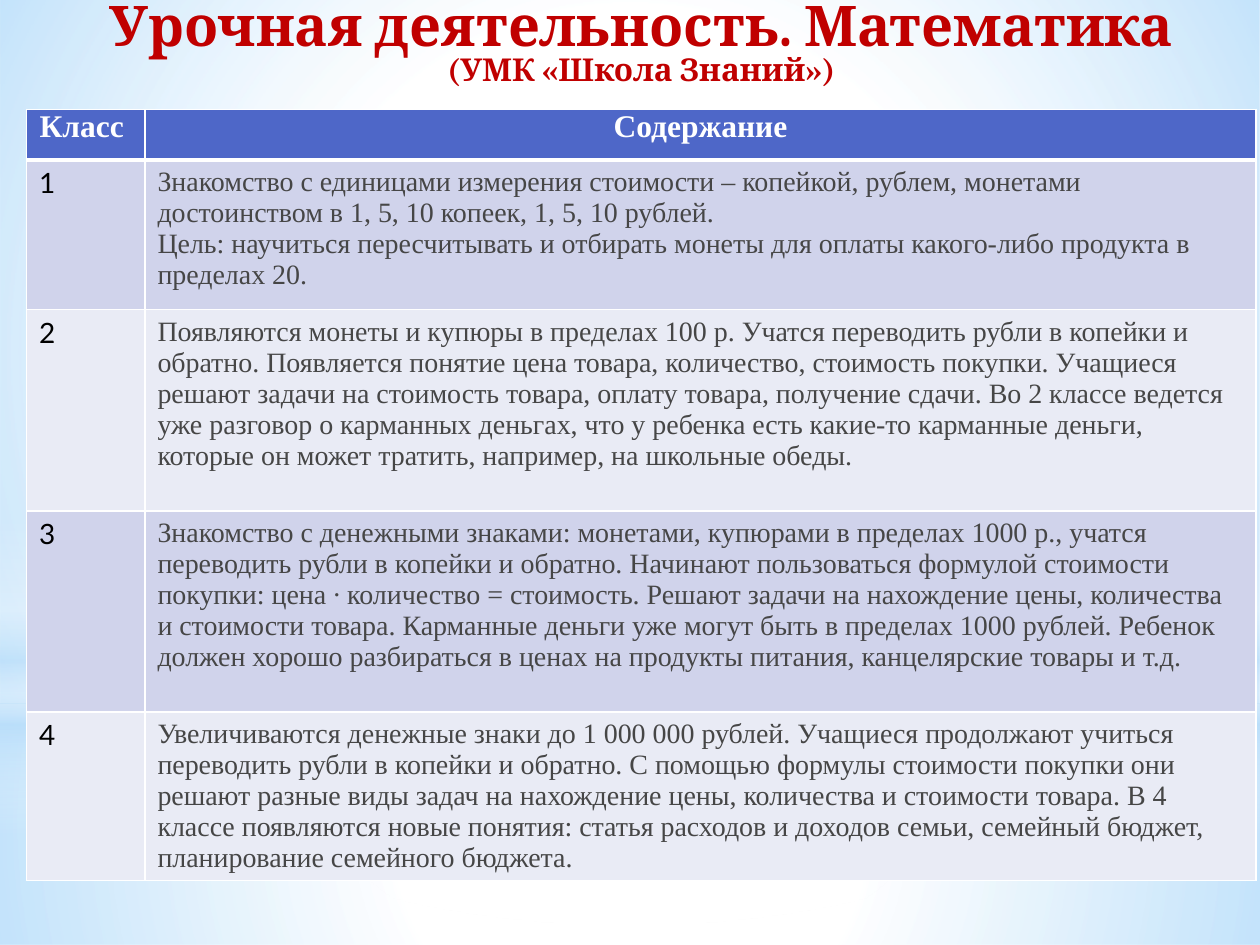
from lxml.etree import SubElement
from pptx import Presentation
from pptx.dml.color import RGBColor
from pptx.enum.shapes import MSO_SHAPE
from pptx.enum.text import MSO_ANCHOR, MSO_AUTO_SIZE, PP_ALIGN
from pptx.oxml.ns import qn
from pptx.util import Pt

WHITE, SKY, RED, GREY = "FFFFFF", "B4DCFA", "C00000", "464646"
HEADER_FILL, BANDS = "4E67C8", ("D0D3EB", "E9EBF5")
SERIF = "Times New Roman"

# shape, top, height, gradient stops (position, colour, opacity), radial
GLOWS = [
    (MSO_SHAPE.RECTANGLE, 401.8, 138.2,
     [(0, WHITE, 91), (37, WHITE, 76), (100, SKY, 79)], True),
    (MSO_SHAPE.RECTANGLE, 0, 401.8,
     [(0, WHITE, 89), (48, WHITE, 62), (100, SKY, 79)], True),
    (MSO_SHAPE.RECTANGLE, 296.6, 180,
     [(0, WHITE, 0), (29, WHITE, 30), (45, SKY, 40), (55, WHITE, 26),
      (65, SKY, 60), (100, WHITE, 0)], False),
    (MSO_SHAPE.OVAL, 126, 401.8, [(0, WHITE, 100), (56, WHITE, 0)], True),
]

HEADINGS = ["Класс ", "Содержание"]
GRADES = [
    ["Знакомство с единицами измерения стоимости – копейкой, рублем, монетами "
     "достоинством в 1, 5, 10 копеек, 1, 5, 10 рублей.",
     "Цель: научиться пересчитывать и отбирать монеты для оплаты какого-либо "
     "продукта в пределах 20."],
    ["Появляются монеты и купюры в пределах 100 р. Учатся переводить рубли в "
     "копейки и обратно. Появляется понятие цена товара, количество, стоимость "
     "покупки. Учащиеся решают задачи на стоимость товара, оплату товара, "
     "получение сдачи. Во 2 классе ведется уже разговор о карманных деньгах, "
     "что у ребенка есть какие-то карманные деньги, которые он может тратить, "
     "например, на школьные обеды."],
    ["Знакомство с денежными знаками: монетами, купюрами в пределах 1000 р., "
     "учатся переводить рубли в копейки и обратно. Начинают пользоваться "
     "формулой стоимости покупки: цена ∙ количество = стоимость. Решают задачи "
     "на нахождение цены, количества и стоимости товара. Карманные деньги уже "
     "могут быть в пределах 1000 рублей. Ребенок должен хорошо разбираться в "
     "ценах на продукты питания, канцелярские товары и т.д."],
    ["Увеличиваются денежные знаки до 1 000 000 рублей. Учащиеся продолжают "
     "учиться переводить рубли в копейки и обратно. С помощью формулы стоимости "
     "покупки они решают разные виды задач на нахождение цены, количества и "
     "стоимости товара. В 4 классе появляются новые понятия: статья расходов и "
     "доходов семьи, семейный бюджет, планирование семейного бюджета."],
]
COLUMN_WIDTHS = [67.7, 635]
ROW_HEIGHTS = [29, 85.5, 115, 115, 96]


def rgb(color):
    return RGBColor.from_string(color)


def style(p, size, name, color, bold=False, align=PP_ALIGN.LEFT):
    p.alignment = align
    p.font.size, p.font.name, p.font.bold = Pt(size), name, bold
    p.font.color.rgb = rgb(color)


def add_glow(slide, kind, top, height, stops, radial):
    """Add a full-width shape with a translucent gradient."""
    sp = slide.shapes.add_shape(kind, 0, Pt(top), Pt(720), Pt(height))
    sp.shadow.inherit = False
    sp.line.fill.background()
    sp.fill.background()
    no_fill = sp.element.spPr.find(qn("a:noFill"))
    grad = SubElement(sp.element.spPr, qn("a:gradFill"), rotWithShape="1")
    no_fill.getparent().replace(no_fill, grad)
    stop_list = SubElement(grad, qn("a:gsLst"))
    for position, color, opacity in stops:
        gs = SubElement(stop_list, qn("a:gs"), pos=str(position * 1000))
        clr = SubElement(gs, qn("a:srgbClr"), val=color)
        SubElement(clr, qn("a:alpha"), val=str(opacity * 1000))
    if radial:
        center = SubElement(grad, qn("a:path"), path="circle")
        SubElement(center, qn("a:fillToRect"), l="50000", t="50000", r="50000", b="50000")
    else:
        SubElement(grad, qn("a:lin"), ang="5400000", scaled="0")


def add_title(slide):
    title = slide.shapes.title
    title.element.getparent().append(title.element)  # in front of the glows
    title.left, title.top, title.width, title.height = Pt(42.5), Pt(2), Pt(648), Pt(56)
    tf = title.text_frame
    tf.word_wrap, tf.auto_size = True, MSO_AUTO_SIZE.NONE
    tf.vertical_anchor = MSO_ANCHOR.TOP
    tf.margin_top = tf.margin_bottom = 0
    tf.text = "Урочная деятельность. Математика\n(УМК «Школа Знаний»)"
    for p, size in zip(tf.paragraphs, (32, 18)):
        style(p, size, "Cambria", RED, True, PP_ALIGN.CENTER)
        p.line_spacing = 0.8
        p.space_before = Pt(0)


def format_cell(cell, fill, top=1, bottom=1):
    """Set the fill and white borders; top and bottom are border widths."""
    tc_pr = cell._tc.get_or_add_tcPr()
    for side, width in (("L", 1), ("R", 1), ("T", top), ("B", bottom)):
        ln = SubElement(tc_pr, qn(f"a:ln{side}"), w=str(Pt(width)))
        SubElement(SubElement(ln, qn("a:solidFill")), qn("a:srgbClr"), val=WHITE)
    cell.fill.solid()
    cell.fill.fore_color.rgb = rgb(fill)


def fill_header(table):
    for cell, heading in zip(table.rows[0].cells, HEADINGS):
        format_cell(cell, HEADER_FILL, bottom=3)
        cell.margin_left = cell.margin_right = Pt(5)
        cell.margin_top = cell.margin_bottom = 0
        cell.text = heading
        style(cell.text_frame.paragraphs[0], 18, SERIF, WHITE, True, PP_ALIGN.CENTER)


def fill_grade(table, grade, paragraphs):
    fonts = (("Lato", "000000"), (SERIF, GREY))
    texts = (str(grade), "\n".join(paragraphs))
    for cell, text, (name, color) in zip(table.rows[grade].cells, texts, fonts):
        format_cell(cell, BANDS[(grade - 1) % 2], top=3 if grade == 1 else 1)
        cell.text = text
        for p in cell.text_frame.paragraphs:
            style(p, 16, name, color)


def add_grades_table(slide):
    table = slide.shapes.add_table(
        len(ROW_HEIGHTS), len(COLUMN_WIDTHS), Pt(15.1), Pt(62.5),
        Pt(sum(COLUMN_WIDTHS)), Pt(sum(ROW_HEIGHTS))).table
    for column, width in zip(table.columns, COLUMN_WIDTHS):
        column.width = Pt(width)
    for row, height in zip(table.rows, ROW_HEIGHTS):
        row.height = Pt(height)
    fill_header(table)
    for grade, paragraphs in enumerate(GRADES, 1):
        fill_grade(table, grade, paragraphs)


def main():
    prs = Presentation()
    prs.slide_width, prs.slide_height = Pt(720), Pt(540)
    slide = prs.slides.add_slide(prs.slide_layouts[5])
    for glow in GLOWS:
        add_glow(slide, *glow)
    add_grades_table(slide)
    add_title(slide)
    prs.save("out.pptx")


if __name__ == "__main__":
    main()
